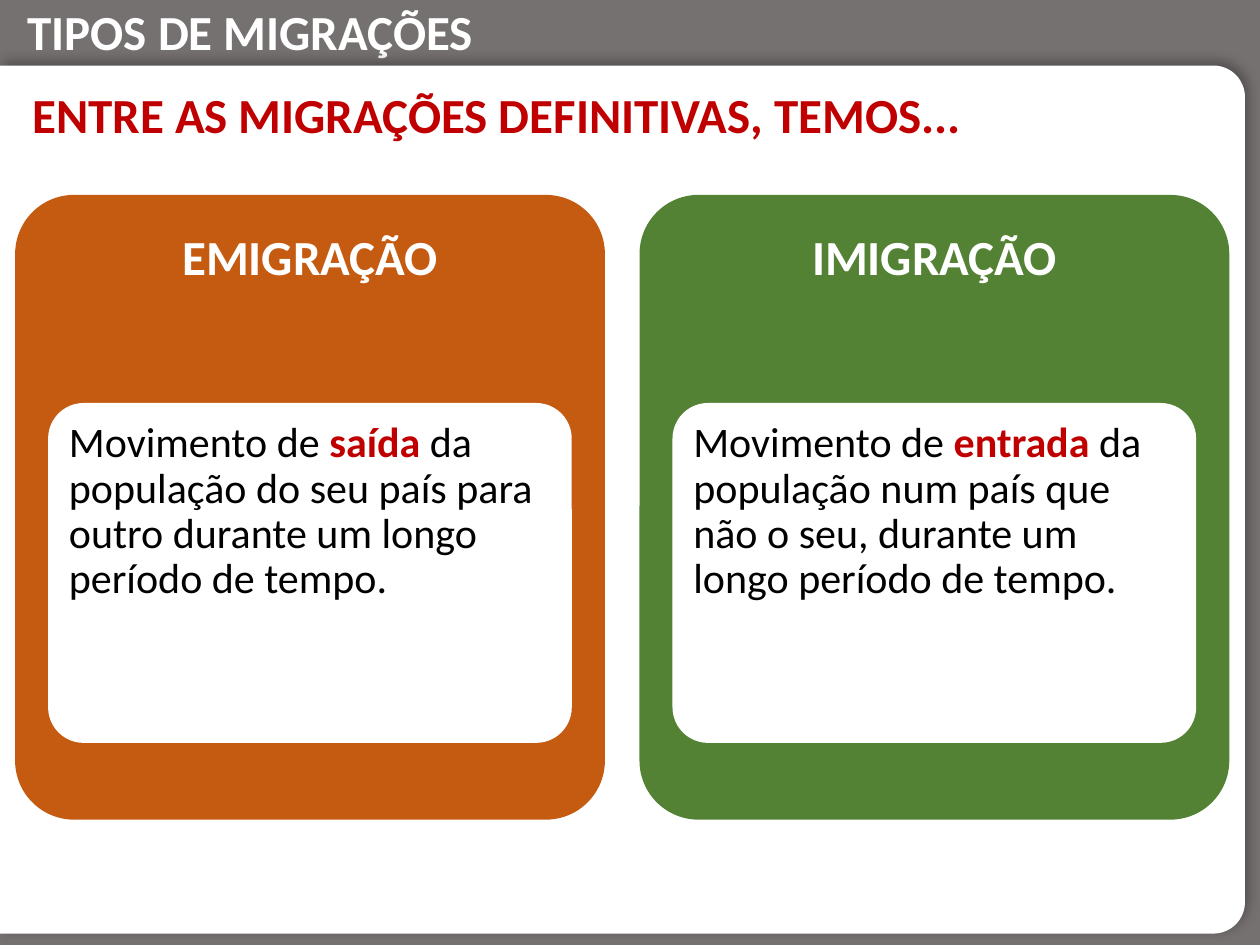
import math
from dataclasses import dataclass

from lxml import etree
from pptx import Presentation
from pptx.dml.color import RGBColor
from pptx.enum.shapes import MSO_SHAPE
from pptx.enum.text import MSO_ANCHOR, PP_ALIGN
from pptx.oxml.ns import qn
from pptx.util import Pt

RECT, ROUNDED = MSO_SHAPE.RECTANGLE, MSO_SHAPE.ROUNDED_RECTANGLE
LEFT, CENTER = PP_ALIGN.LEFT, PP_ALIGN.CENTER
TOP, MIDDLE = MSO_ANCHOR.TOP, MSO_ANCHOR.MIDDLE


@dataclass(frozen=True)
class Theme:
    font: str = "Calibri"
    heading_size: int = 28
    body_size: int = 24
    frame: str = "767171"
    white: str = "FFFFFF"
    black: str = "000000"
    accent: str = "C00000"
    emigration: str = "C55A11"
    immigration: str = "548235"


THEME = Theme()
PAGE_WIDTH, PAGE_HEIGHT = 720, 540
CARD_LEFT, CARD_TOP, CARD_PITCH = 8.64, 111.4, 356.8
CARD_WIDTH, CARD_HEIGHT = 337, 357


def paint(shape, color=None, line=None):
    """Set fill and outline, with no inherited shadow."""
    shape.shadow.inherit = False
    if color:
        shape.fill.solid()
        shape.fill.fore_color.rgb = RGBColor.from_string(color)
    else:
        shape.fill.background()
    if line:
        shape.line.color.rgb = RGBColor.from_string(line)
        shape.line.width = Pt(2.25)
    else:
        shape.line.fill.background()


def add_block(page, kind, area, color=None, line=None, corner=None):
    block = page.shapes.add_shape(kind, *map(Pt, area))
    if corner is not None:
        block.adjustments[0] = corner
    paint(block, color, line)
    return block


def write(shape, spans, size, align=LEFT, anchor=TOP, insets=None, spacing=None):
    """Fill a shape with one paragraph of (text, color, bold) spans."""
    frame = shape.text_frame
    frame.word_wrap = True
    frame.vertical_anchor = anchor
    if insets:
        (frame.margin_left, frame.margin_top,
         frame.margin_right, frame.margin_bottom) = map(Pt, insets)
    para = frame.paragraphs[0]
    para.alignment = align
    if spacing:
        para.line_spacing = spacing
    for text, color, bold in spans:
        span = para.add_run()
        span.text = text
        span.font.name = THEME.font
        span.font.size = Pt(size)
        span.font.bold = bold
        span.font.color.rgb = RGBColor.from_string(color)


def add_text(page, area, spans, size, **layout):
    write(page.shapes.add_textbox(*map(Pt, area)), spans, size, **layout)


def add_shadow(shape, color, opacity, blur, distance, angle):
    effects = shape._element.spPr.find(qn("a:effectLst"))
    shadow = etree.SubElement(
        effects, qn("a:outerShdw"), blurRad=str(Pt(blur)), dist=str(Pt(distance)),
        dir=str(angle * 60000), algn="bl", rotWithShape="0")
    tint = etree.SubElement(shadow, qn("a:srgbClr"), val=color)
    etree.SubElement(tint, qn("a:alpha"), val=str(opacity * 1000))


def add_panel(page, top, right, bottom, radius):
    """White sheet from the left edge, rounded on its right side."""
    points = [(0, top)]
    for center_y, start in ((top + radius, -90), (bottom - radius, 0)):
        for angle in range(start, start + 91, 5):
            turn = math.radians(angle)
            points.append((right - radius + radius * math.cos(turn),
                           center_y + radius * math.sin(turn)))
    points.append((0, bottom))
    builder = page.shapes.build_freeform(0, Pt(bottom))
    builder.add_line_segments([(Pt(x), Pt(y)) for x, y in points], close=True)
    panel = builder.convert_to_shape()
    paint(panel, THEME.white)
    add_shadow(panel, THEME.black, 30, 7, 3, 315)


def add_card(page, left, color, title, spans):
    add_block(page, ROUNDED, (left, CARD_TOP, CARD_WIDTH, CARD_HEIGHT), color, corner=0.1)
    add_text(page, (left, CARD_TOP, CARD_WIDTH, 107), [(title, THEME.white, True)],
             THEME.heading_size, align=CENTER, insets=(8.6, 22.4, 8.6, 8.6), spacing=0.9)
    add_block(page, ROUNDED, (left + 20, CARD_TOP + 120, 297, 192),
              THEME.white, line=THEME.white, corner=0.1)
    add_text(page, (left + 25.8, CARD_TOP + 125.6, 285, 181), spans, THEME.body_size,
             insets=(5, 3.8, 5, 3.8), spacing=0.9)


def main():
    deck = Presentation()
    deck.slide_width, deck.slide_height = Pt(PAGE_WIDTH), Pt(PAGE_HEIGHT)
    page = deck.slides.add_slide(deck.slide_layouts[6])

    # Grey frame, title and white panel
    add_block(page, RECT, (0, 0, PAGE_WIDTH, PAGE_HEIGHT), THEME.frame)
    add_text(page, (8.64, -2.9, 675, 41), [("TIPOS DE MIGRAÇÕES", THEME.white, True)],
             THEME.heading_size)
    add_panel(page, top=37.5, right=711.4, bottom=533.5, radius=18)

    # Heading
    heading = add_block(page, ROUNDED, (8.64, 37.5, 567, 55.4))
    write(heading, [("ENTRE AS MIGRAÇÕES DEFINITIVAS, TEMOS...", THEME.accent, True)],
          THEME.heading_size, anchor=MIDDLE)

    # One card for each kind of migration
    cards = (
        (THEME.emigration, "EMIGRAÇÃO", "saída ",
         "da população do seu país para outro durante um longo período de tempo."),
        (THEME.immigration, "IMIGRAÇÃO", "entrada ",
         "da população num país que não o seu, durante um longo período de tempo."),
    )
    for index, (color, title, keyword, rest) in enumerate(cards):
        spans = [("Movimento de ", THEME.black, False),
                 (keyword, THEME.accent, True),
                 (rest, THEME.black, False)]
        add_card(page, CARD_LEFT + index * CARD_PITCH, color, title, spans)

    deck.save("out.pptx")


if __name__ == "__main__":
    main()
